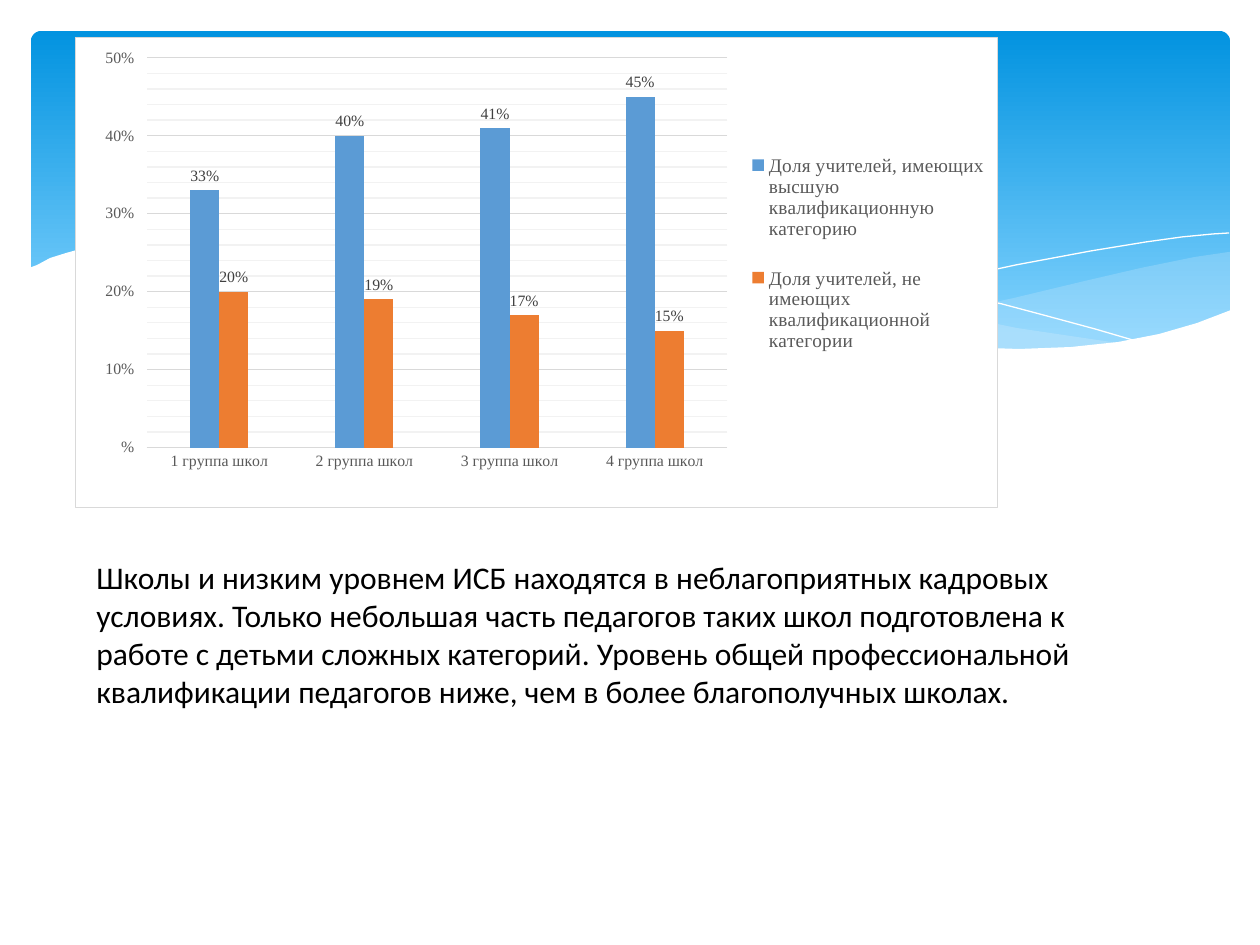
"""Build a slide comparing teacher qualification across four groups of schools."""
from dataclasses import dataclass
from typing import Optional

import lxml.etree
import pptx
import pptx.chart.data
import pptx.dml.color
import pptx.enum.chart
import pptx.enum.shapes
import pptx.oxml
import pptx.oxml.ns
import pptx.util

RGBColor = pptx.dml.color.RGBColor
Point = tuple[int, int]
SCALE = 914400 / 126
WHITE = RGBColor(0xFF, 0xFF, 0xFF)
BLACK = RGBColor(0, 0, 0)
SKY_TOP = RGBColor(0x02, 0x93, 0xE0)
SKY_BOTTOM = RGBColor(0x83, 0xD3, 0xFE)
PALE_BLUE = RGBColor(0xC6, 0xE7, 0xFC)
BLUE = RGBColor(0x5B, 0x9B, 0xD5)
ORANGE = RGBColor(0xED, 0x7D, 0x31)
TEXT_GREY = RGBColor(0x59, 0x59, 0x59)
LABEL_GREY = RGBColor(0x40, 0x40, 0x40)
GRID_GREY = RGBColor(0xD9, 0xD9, 0xD9)
MINOR_GREY = RGBColor(0xF2, 0xF2, 0xF2)
SERIF = "Times New Roman"
PERCENT = r"#\%"


@dataclass(frozen=True)
class Wave:
    points: list[Point]
    fill: Optional[RGBColor] = None
    opacity: int = 100


@dataclass(frozen=True)
class Share:
    name: str
    values: tuple[int, ...]
    color: RGBColor


WAVES = [
    Wave([(1229, 252), (1195, 257), (1141, 268), (1085, 281), (1014, 298), (950, 312),
          (889, 324), (833, 334), (888, 342), (938, 347), (983, 349), (1025, 350),
          (1063, 349), (1098, 346), (1130, 340), (1160, 334), (1187, 326), (1213, 318),
          (1230, 311), (1230, 252)], PALE_BLUE, 29),
    Wave([(1125, 344), (1091, 339), (1017, 328), (934, 311), (842, 291), (793, 280),
          (736, 266), (682, 256), (632, 247), (586, 241), (529, 236), (479, 233),
          (433, 234), (394, 237), (360, 241), (407, 247), (456, 256), (509, 266),
          (566, 280), (619, 292), (668, 302), (713, 312), (757, 321), (799, 329),
          (838, 335), (876, 340), (910, 345), (943, 348), (974, 349), (1003, 350),
          (1044, 350), (1080, 349), (1104, 347)], PALE_BLUE, 40),
    Wave([(389, 246), (413, 242), (445, 238), (488, 236), (545, 236), (591, 238),
          (643, 242), (701, 248), (766, 257), (838, 268), (916, 285), (1002, 304),
          (1047, 316), (1095, 329), (1143, 343)]),
    Wave([(772, 324), (823, 310), (876, 296), (942, 281), (1016, 265), (1091, 251),
          (1146, 242), (1182, 237), (1213, 234), (1229, 233)]),
    Wave([(1231, 310), (1197, 323), (1159, 334), (1118, 342), (1071, 347), (1019, 349),
          (959, 347), (892, 343), (816, 334), (730, 320), (634, 302), (563, 277),
          (527, 268), (460, 255), (398, 244), (341, 237), (290, 233), (243, 232),
          (203, 232), (166, 234), (134, 238), (107, 243), (84, 248), (66, 253),
          (50, 258), (37, 265), (29, 268), (29, 415), (1231, 415)], WHITE),
]
GROUPS = [f"{number} группа школ" for number in range(1, 5)]
SHARES = [
    Share("Доля учителей, имеющих высшую квалификационную категорию", (33, 40, 41, 45), BLUE),
    Share("Доля учителей, не имеющих квалификационной категории", (20, 19, 17, 15), ORANGE),
]
CONCLUSION = (
    "Школы и низким уровнем ИСБ находятся в неблагоприятных кадровых условиях. "
    "Только небольшая часть педагогов таких школ подготовлена к работе с детьми "
    "сложных категорий. Уровень общей профессиональной квалификации педагогов ниже, "
    "чем в более благополучных школах."
)


def px(length: int) -> int:
    return round(length * SCALE)


def box(left: int, top: int, width: int, height: int) -> tuple[int, ...]:
    return tuple(px(length) for length in (left, top, width, height))


def draw_sky(shapes) -> None:
    sky = shapes.add_shape(pptx.enum.shapes.MSO_SHAPE.ROUNDED_RECTANGLE,
                           *box(31, 31, 1199, 340))
    sky.adjustments[0] = 0.03
    sky.shadow.inherit = False
    sky.line.fill.background()
    sky.fill.gradient()
    sky.fill.gradient_angle = 270
    for stop, color, position in zip(sky.fill.gradient_stops, (SKY_TOP, SKY_BOTTOM), (0, 0.9)):
        stop.color.rgb = color
        stop.position = position


def draw_wave(shapes, wave: Wave) -> None:
    closed = wave.fill is not None
    builder = shapes.build_freeform(*wave.points[0], scale=SCALE)
    builder.add_line_segments(wave.points[1:], close=closed)
    outline = builder.convert_to_shape()
    outline.shadow.inherit = False
    if not closed:
        outline.fill.background()
        outline.line.color.rgb = WHITE
        outline.line.width = 0
        return
    outline.line.fill.background()
    outline.fill.solid()
    outline.fill.fore_color.rgb = wave.fill
    if wave.opacity < 100:
        color = outline.fill._xPr.find(".//" + pptx.oxml.ns.qn("a:srgbClr"))
        alpha = lxml.etree.SubElement(color, pptx.oxml.ns.qn("a:alpha"))
        alpha.set("val", str(wave.opacity * 1000))


def style_font(font, size: int, color: RGBColor, name: str = SERIF) -> None:
    font.size = pptx.util.Pt(size)
    font.color.rgb = color
    font.name = name


def style_line(line, color: RGBColor) -> None:
    line.color.rgb = color
    line.width = pptx.util.Pt(0.75)


def manual_layout(x: float, y: float, w: float, h: float, inner: bool = False):
    target = '<c:layoutTarget val="inner"/>' if inner else ""
    return pptx.oxml.parse_xml(
        f'<c:layout {pptx.oxml.ns.nsdecls("c")}><c:manualLayout>{target}'
        '<c:xMode val="edge"/><c:yMode val="edge"/>'
        f'<c:x val="{x}"/><c:y val="{y}"/><c:w val="{w}"/><c:h val="{h}"/>'
        '</c:manualLayout></c:layout>')


def line_properties(line: RGBColor, fill: Optional[RGBColor] = None):
    interior = f'<a:solidFill><a:srgbClr val="{fill}"/></a:solidFill>' if fill else ""
    return pptx.oxml.parse_xml(
        f'<c:spPr {pptx.oxml.ns.nsdecls("c", "a")}>{interior}'
        f'<a:ln w="{pptx.util.Pt(0.75)}"><a:solidFill><a:srgbClr val="{line}"/>'
        '</a:solidFill></a:ln></c:spPr>')


def frame_chart(chart) -> None:
    plot_area = chart._chartSpace.chart.plotArea
    for layout in plot_area.findall(pptx.oxml.ns.qn("c:layout")):
        plot_area.remove(layout)
    plot_area.insert(0, manual_layout(0.077, 0.043, 0.63, 0.83, inner=True))
    chart._chartSpace.chart.addnext(line_properties(GRID_GREY, WHITE))


def style_axes(chart) -> None:
    groups = chart.category_axis
    groups.major_tick_mark = pptx.enum.chart.XL_TICK_MARK.NONE
    style_font(groups.tick_labels.font, 9, TEXT_GREY)
    style_line(groups.format.line, GRID_GREY)

    percents = chart.value_axis
    percents.minimum_scale, percents.maximum_scale = 0, 50
    percents.major_unit, percents.minor_unit = 10, 2
    percents.has_major_gridlines = percents.has_minor_gridlines = True
    style_line(percents.major_gridlines.format.line, GRID_GREY)
    minor_gridlines = percents._element.find(pptx.oxml.ns.qn("c:minorGridlines"))
    minor_gridlines.append(line_properties(MINOR_GREY))
    percents.format.line.fill.background()
    percents.tick_labels.number_format = PERCENT
    percents.tick_labels.number_format_is_linked = False
    style_font(percents.tick_labels.font, 9, TEXT_GREY)


def style_legend(chart) -> None:
    chart.has_legend = True
    legend = chart.legend
    legend.position = pptx.enum.chart.XL_LEGEND_POSITION.RIGHT
    legend.include_in_layout = False
    style_font(legend.font, 11, TEXT_GREY)
    for layout in legend._element.findall(pptx.oxml.ns.qn("c:layout")):
        legend._element.remove(layout)
    position = legend._element.find(pptx.oxml.ns.qn("c:legendPos"))
    position.addnext(manual_layout(0.73, 0.19, 0.26, 0.54))


def draw_chart(shapes) -> None:
    data = pptx.chart.data.CategoryChartData(number_format=PERCENT)
    data.categories = GROUPS
    for share in SHARES:
        data.add_series(share.name, share.values)
    chart = shapes.add_chart(pptx.enum.chart.XL_CHART_TYPE.COLUMN_CLUSTERED,
                             *box(75, 37, 923, 471), data).chart
    chart.has_title = False
    style_font(chart.font, 10, BLACK)
    frame_chart(chart)
    style_axes(chart)
    style_legend(chart)
    plot = chart.plots[0]
    plot.gap_width, plot.overlap = 300, 0
    plot.vary_by_categories = False
    for share, columns in zip(SHARES, plot.series):
        columns.format.fill.solid()
        columns.format.fill.fore_color.rgb = share.color
        labels = columns.data_labels
        labels.show_value = True
        labels.number_format = PERCENT
        labels.number_format_is_linked = False
        labels.position = pptx.enum.chart.XL_LABEL_POSITION.OUTSIDE_END
        style_font(labels.font, 9, LABEL_GREY)


def draw_conclusion(shapes) -> None:
    frame = shapes.add_textbox(*box(84, 552, 1022, 204)).text_frame
    frame.word_wrap = True
    frame.text = CONCLUSION
    style_font(frame.paragraphs[0].font, 18, BLACK, "Calibri")


def main() -> None:
    deck = pptx.Presentation()
    deck.slide_width, deck.slide_height = px(1260), px(945)
    shapes = deck.slides.add_slide(deck.slide_layouts[6]).shapes
    draw_sky(shapes)
    for wave in WAVES:
        draw_wave(shapes, wave)
    draw_chart(shapes)
    draw_conclusion(shapes)
    deck.save("out.pptx")


if __name__ == "__main__":
    main()
